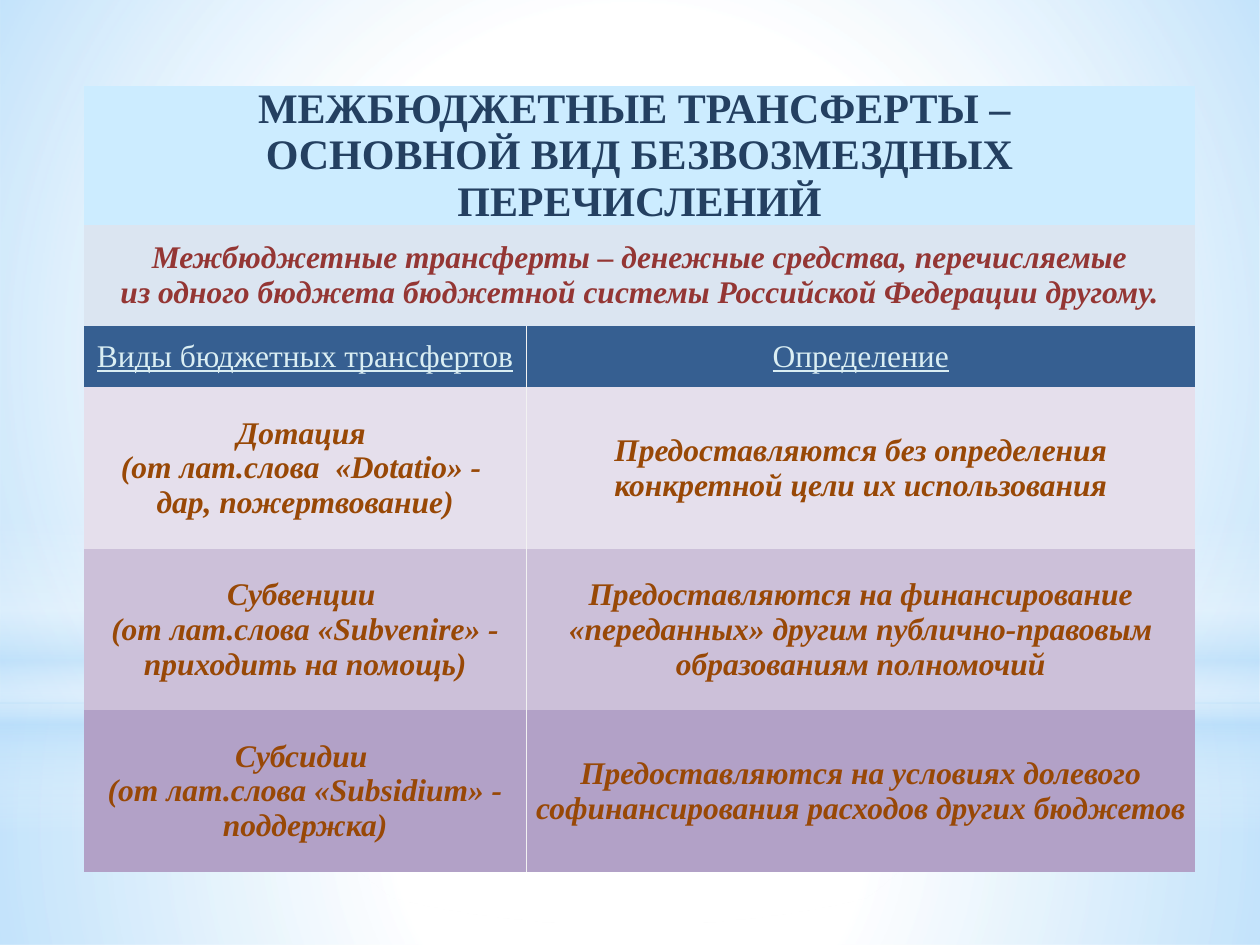
from lxml import etree
from pptx import Presentation
from pptx.dml.color import RGBColor
from pptx.enum.shapes import MSO_SHAPE
from pptx.enum.text import MSO_ANCHOR, PP_ALIGN
from pptx.oxml.ns import qn
from pptx.util import Pt

RECT, OVAL = MSO_SHAPE.RECTANGLE, MSO_SHAPE.OVAL
MIDDLE, CENTER = MSO_ANCHOR.MIDDLE, PP_ALIGN.CENTER

FONT = "Times New Roman"
NAVY = RGBColor(0x24, 0x40, 0x61)
RED = RGBColor(0x94, 0x36, 0x34)
ICE = RGBColor(0xDA, 0xEE, 0xF3)
BROWN = RGBColor(0x98, 0x48, 0x06)
SKY = RGBColor(0xCC, 0xEC, 0xFF)
MIST = RGBColor(0xDB, 0xE5, 0xF1)
BLUE = RGBColor(0x36, 0x5F, 0x91)
LILACS = [RGBColor(0xE5, 0xDF, 0xEC), RGBColor(0xCC, 0xC0, 0xD9), RGBColor(0xB2, 0xA1, 0xC7)]
WHITE = RGBColor(0xFF, 0xFF, 0xFF)
GLOW = RGBColor(0xB4, 0xDC, 0xFA)
DIVIDER = RGBColor(0xF2, 0xF2, 0xF2)

SLIDE_W, SLIDE_H = 720, 540
BACKDROP = [
    (RECT, 401.76, 138.24, True, [(0, WHITE, 91), (37, WHITE, 76), (100, GLOW, 79)]),
    (RECT, 0, 401.76, True, [(0, WHITE, 89), (48, WHITE, 62), (100, GLOW, 79)]),
    (RECT, 296.64, 180, False, [(0, WHITE, 0), (29, WHITE, 30), (45, GLOW, 40),
                                (55, WHITE, 26), (65, GLOW, 60), (100, WHITE, 0)]),
    (OVAL, 126, 401.76, True, [(0, WHITE, 100), (56, WHITE, 0)]),
]

HEADING = ["МЕЖБЮДЖЕТНЫЕ ТРАНСФЕРТЫ – ", "ОСНОВНОЙ ВИД БЕЗВОЗМЕЗДНЫХ ПЕРЕЧИСЛЕНИЙ"]
MEANING = ["Межбюджетные трансферты – денежные средства, перечисляемые",
           "из одного бюджета бюджетной системы Российской Федерации другому."]
COLUMN_HEADS = [["Виды бюджетных трансфертов"], ["Определение"]]
TRANSFERS = [
    [["Дотация ", "(от лат.слова  «Dotatio» - ", "дар, пожертвование)"],
     ["Предоставляются без определения конкретной цели их использования"]],
    [["Субвенции ", "(от лат.слова «Subvenire» -", "приходить на помощь)"],
     ["Предоставляются на финансирование «переданных» другим публично-правовым "
      "образованиям полномочий"]],
    [["Субсидии ", "(от лат.слова «Subsidium» -", "поддержка)"],
     ["Предоставляются на условиях долевого софинансирования расходов других бюджетов"]],
]

ROWS = [
    ([HEADING], SKY, dict(size=24, color=NAVY, bold=True)),
    ([MEANING], MIST, dict(color=RED, bold=True, italic=True)),
    (COLUMN_HEADS, BLUE, dict(color=ICE, underline=True)),
] + [(texts, lilac, dict(color=BROWN, bold=True, italic=True))
     for texts, lilac in zip(TRANSFERS, LILACS)]

TABLE_LEFT, TABLE_TOP = 48, 49
COLUMN_WIDTHS = [252.8, 382.2]
ROW_HEIGHTS = [78.6, 57.4, 35.4] + [92.3] * len(TRANSFERS)
NO_STYLE = "{2D5ABB26-0587-4C30-8999-92F81FD0307C}"


def add_color(parent, color, opacity=100):
    node = etree.SubElement(parent, qn("a:srgbClr"), val=str(color))
    if opacity < 100:
        etree.SubElement(node, qn("a:alpha"), val=str(opacity * 1000))


def add_backdrop(slide, geometry, top, height, radial, stops):
    band = slide.shapes.add_shape(geometry, 0, Pt(top), Pt(SLIDE_W), Pt(height))
    band.shadow.inherit = False
    band.line.fill.background()
    gradient = etree.Element(qn("a:gradFill"), rotWithShape="1")
    stop_list = etree.SubElement(gradient, qn("a:gsLst"))
    for position, color, opacity in stops:
        stop = etree.SubElement(stop_list, qn("a:gs"), pos=str(position * 1000))
        add_color(stop, color, opacity)
    if radial:
        circle = etree.SubElement(gradient, qn("a:path"), path="circle")
        etree.SubElement(circle, qn("a:fillToRect"), l="50000", t="50000", r="50000", b="50000")
    else:
        etree.SubElement(gradient, qn("a:lin"), ang="5400000", scaled="0")
    band.element.spPr.find(qn("a:prstGeom")).addnext(gradient)


def write(cell, lines, size=18, color=BROWN, bold=False, italic=False, underline=False):
    cell.vertical_anchor = MIDDLE
    cell.margin_left = cell.margin_right = Pt(3)
    cell.margin_top = cell.margin_bottom = 0
    frame = cell.text_frame
    for number, line in enumerate(lines):
        paragraph = frame.add_paragraph() if number else frame.paragraphs[0]
        paragraph.alignment = CENTER
        run = paragraph.add_run()
        run.text = line
        font = run.font
        font.name, font.size = FONT, Pt(size)
        font.bold, font.italic, font.underline = bold, italic, underline
        font.color.rgb = color


def add_divider(cell, side):
    border = etree.Element(qn(side), w=str(Pt(1)))
    add_color(etree.SubElement(border, qn("a:solidFill")), DIVIDER)
    cell.fill
    cell._tc.get_or_add_tcPr().insert(0, border)


def add_transfer_table(slide):
    holder = slide.shapes.add_table(len(ROWS), len(COLUMN_WIDTHS), Pt(TABLE_LEFT), Pt(TABLE_TOP),
                                    Pt(sum(COLUMN_WIDTHS)), Pt(sum(ROW_HEIGHTS)))
    table = holder.table
    for style in holder._element.iter(qn("a:tableStyleId")):
        style.text = NO_STYLE
    for column, width in zip(table.columns, COLUMN_WIDTHS):
        column.width = Pt(width)
    for index, (texts, background, style) in enumerate(ROWS):
        table.rows[index].height = Pt(ROW_HEIGHTS[index])
        left, right = table.cell(index, 0), table.cell(index, 1)
        for cell in (left, right):
            cell.fill.solid()
            cell.fill.fore_color.rgb = background
        if len(texts) == 1:
            left.merge(right)
        else:
            add_divider(left, "a:lnR")
            add_divider(right, "a:lnL")
        for cell, lines in zip((left, right), texts):
            write(cell, lines, **style)


def main():
    deck = Presentation()
    deck.slide_width, deck.slide_height = Pt(SLIDE_W), Pt(SLIDE_H)
    slide = deck.slides.add_slide(deck.slide_layouts[6])
    slide.background.fill.solid()
    slide.background.fill.fore_color.rgb = WHITE
    for band in BACKDROP:
        add_backdrop(slide, *band)
    add_transfer_table(slide)
    deck.save("out.pptx")


if __name__ == "__main__":
    main()
